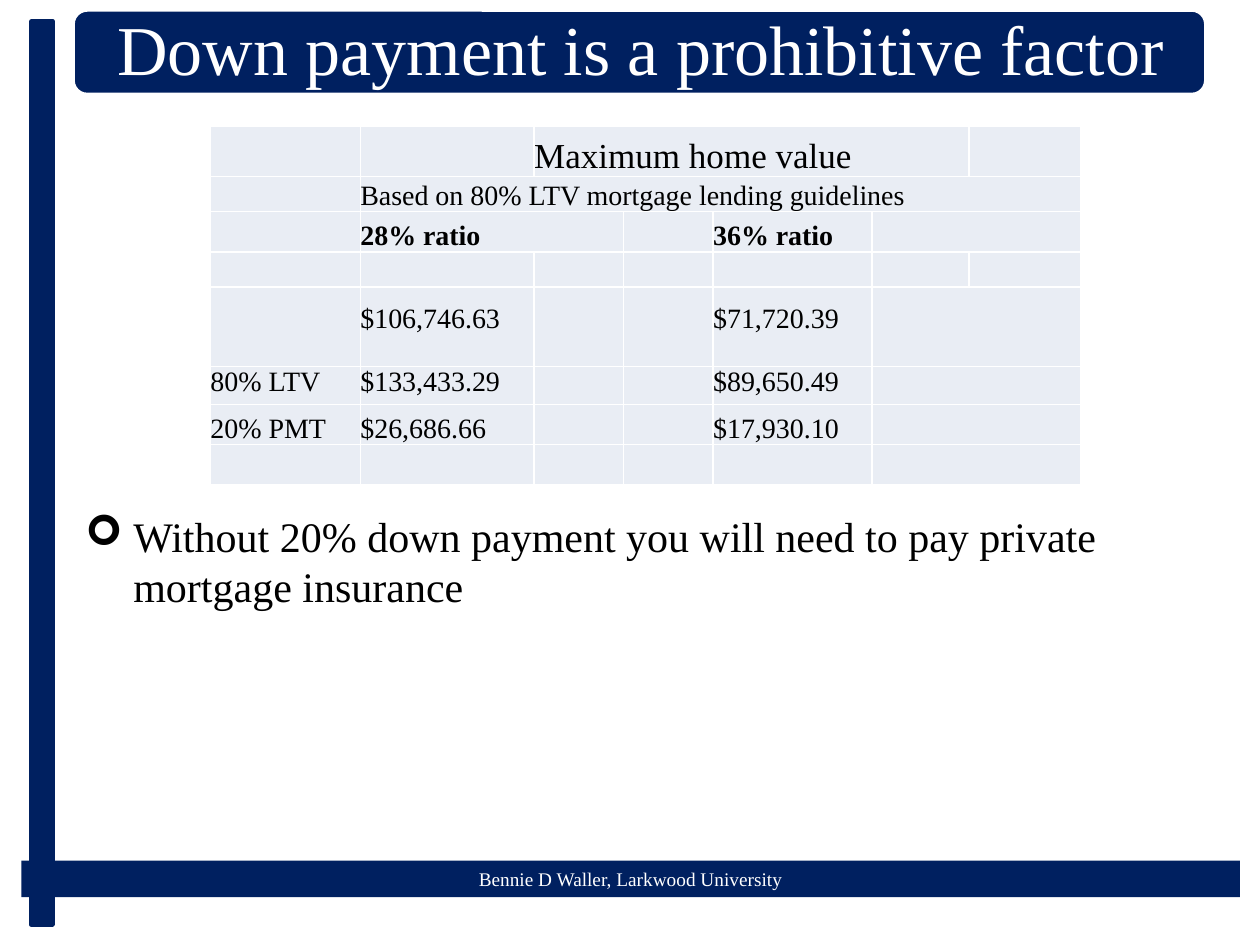
from dataclasses import dataclass

from lxml.etree import SubElement
from pptx import Presentation
from pptx.dml.color import RGBColor
from pptx.enum.shapes import MSO_SHAPE
from pptx.enum.text import MSO_ANCHOR, PP_ALIGN
from pptx.oxml.ns import qn
from pptx.util import Inches, Pt


@dataclass(frozen=True)
class Theme:
    font: str = "Times New Roman"
    navy: RGBColor = RGBColor(0x00, 0x20, 0x60)
    white: RGBColor = RGBColor(0xFF, 0xFF, 0xFF)
    black: RGBColor = RGBColor(0x00, 0x00, 0x00)
    cell: RGBColor = RGBColor(0xE9, 0xED, 0xF4)
    title_size: Pt = Pt(40)
    body_size: Pt = Pt(24)
    heading_size: Pt = Pt(20)
    table_size: Pt = Pt(16)
    footer_size: Pt = Pt(11)


THEME = Theme()


def write_text(frame, text, size, color, bold=False):
    paragraph = frame.paragraphs[0]
    run = paragraph.add_run()
    run.text = text
    font_format = {"name": THEME.font, "size": size, "bold": bold}
    for attribute, value in font_format.items():
        setattr(run.font, attribute, value)
    run.font.color.rgb = color
    return paragraph


def add_panel(shapes, kind, box, line_color=None, line_width=0):
    """Add a navy shape, outlined only when a line colour is given."""
    panel = shapes.add_shape(kind, *map(Inches, box))
    panel.shadow.inherit = False
    panel.fill.solid()
    panel.fill.fore_color.rgb = THEME.navy
    if line_color is None:
        panel.line.fill.background()
    else:
        panel.line.color.rgb = line_color
        panel.line.width = Pt(line_width)
    return panel


presentation = Presentation()
presentation.slide_width = Inches(10)
presentation.slide_height = Inches(7.5)
slide = presentation.slides.add_slide(presentation.slide_layouts[6])

# Footer band and side bar
footer = add_panel(slide.shapes, MSO_SHAPE.RECTANGLE, (0.17, 6.83, 9.67, 0.29))
paragraph = write_text(footer.text_frame, "Bennie D Waller, Larkwood University",
                       THEME.footer_size, THEME.white)
paragraph.alignment = PP_ALIGN.CENTER
add_panel(slide.shapes, MSO_SHAPE.RECTANGLE, (0.25, 0.17, 0.17, 7.17), THEME.navy, 2.5)

# Title banner
banner = slide.shapes.add_group_shape()
add_panel(banner.shapes, MSO_SHAPE.ROUNDED_RECTANGLE, (0.58, 0.08, 8.99, 0.67),
          THEME.white, 2)
title = banner.shapes.add_textbox(Inches(0.62), Inches(0.12), Inches(8.93), Inches(0.6))
title_format = {
    "word_wrap": True,
    "vertical_anchor": MSO_ANCHOR.MIDDLE,
    "margin_left": Inches(0.17),
    "margin_right": Inches(0.17),
    "margin_top": Inches(0.08),
    "margin_bottom": Inches(0.08),
}
for attribute, value in title_format.items():
    setattr(title.text_frame, attribute, value)
paragraph = write_text(title.text_frame, "Down payment is a prohibitive factor",
                       THEME.title_size, THEME.white)
paragraph.alignment = PP_ALIGN.CENTER
paragraph.line_spacing = 0.9

# Home value table
column_widths = [1.19, 1.38, 0.71, 0.71, 1.26, 0.77, 0.89]
row_heights = [0.4, 0.28, 0.32, 0.28, 0.63, 0.3, 0.32, 0.32]
cell_texts = {
    (0, 2): "Maximum home value",
    (1, 1): "Based on 80% LTV mortgage lending guidelines",
    (2, 1): "28% ratio", (2, 4): "36% ratio",
    (4, 1): "$106,746.63", (4, 4): "$71,720.39",
    (5, 0): "80% LTV", (5, 1): "$133,433.29", (5, 4): "$89,650.49",
    (6, 0): "20% PMT", (6, 1): "$26,686.66", (6, 4): "$17,930.10",
}
merged_spans = [(0, 2, 5), (1, 1, 6), (2, 1, 2)]
merged_spans += [(row, 5, 6) for row in (2, 4, 5, 6, 7)]
HEADING_ROW, RATIO_ROW, LOAN_ROW, LTV_ROW = 0, 2, 4, 5

table_frame = slide.shapes.add_table(
    len(row_heights), len(column_widths), Inches(1.67), Inches(1),
    Inches(sum(column_widths)), Inches(sum(row_heights)))
table = table_frame.table
for column, width in zip(table.columns, column_widths):
    column.width = Inches(width)
for row, height in zip(table.rows, row_heights):
    row.height = Inches(height)
for row, first, last in merged_spans:
    table.cell(row, first).merge(table.cell(row, last))

for row in range(len(row_heights)):
    for column in range(len(column_widths)):
        cell = table.cell(row, column)
        cell_format = {
            "margin_left": 0,
            "margin_right": 0,
            "margin_top": 0,
            "margin_bottom": Inches(0.25) if row == LOAN_ROW else 0,
            "vertical_anchor": MSO_ANCHOR.TOP if row == LTV_ROW else MSO_ANCHOR.BOTTOM,
        }
        for attribute, value in cell_format.items():
            setattr(cell, attribute, value)

        properties = cell._tc.get_or_add_tcPr()
        for side in ("a:lnL", "a:lnR", "a:lnT", "a:lnB"):
            border = SubElement(properties, qn(side), w=str(Pt(1)))
            border_fill = SubElement(border, qn("a:solidFill"))
            SubElement(border_fill, qn("a:srgbClr"), val=str(THEME.white))
        cell.fill.solid()
        cell.fill.fore_color.rgb = THEME.cell

        if (row, column) in cell_texts:
            size = THEME.heading_size if row == HEADING_ROW else THEME.table_size
            write_text(cell.text_frame, cell_texts[row, column], size, THEME.black,
                       bold=row == RATIO_ROW)
        else:
            # Keeps an empty cell from stretching its row
            SubElement(cell.text_frame.paragraphs[0]._p, qn("a:endParaRPr"),
                       sz=str(int(THEME.table_size.pt * 100)))

# Bulleted note
note = slide.shapes.add_textbox(Inches(0.58), Inches(4), Inches(9.08), Inches(0.91))
note.text_frame.word_wrap = True
paragraph = write_text(
    note.text_frame,
    "Without 20% down payment you will need to pay private mortgage insurance",
    THEME.body_size, THEME.black)
paragraph_properties = paragraph._p.get_or_add_pPr()
paragraph_properties.set("marL", str(Inches(0.38)))
paragraph_properties.set("indent", str(Inches(-0.38)))
SubElement(paragraph_properties, qn("a:buFont"), typeface="Wingdings")
SubElement(paragraph_properties, qn("a:buChar"), char="➢")

presentation.save("out.pptx")
